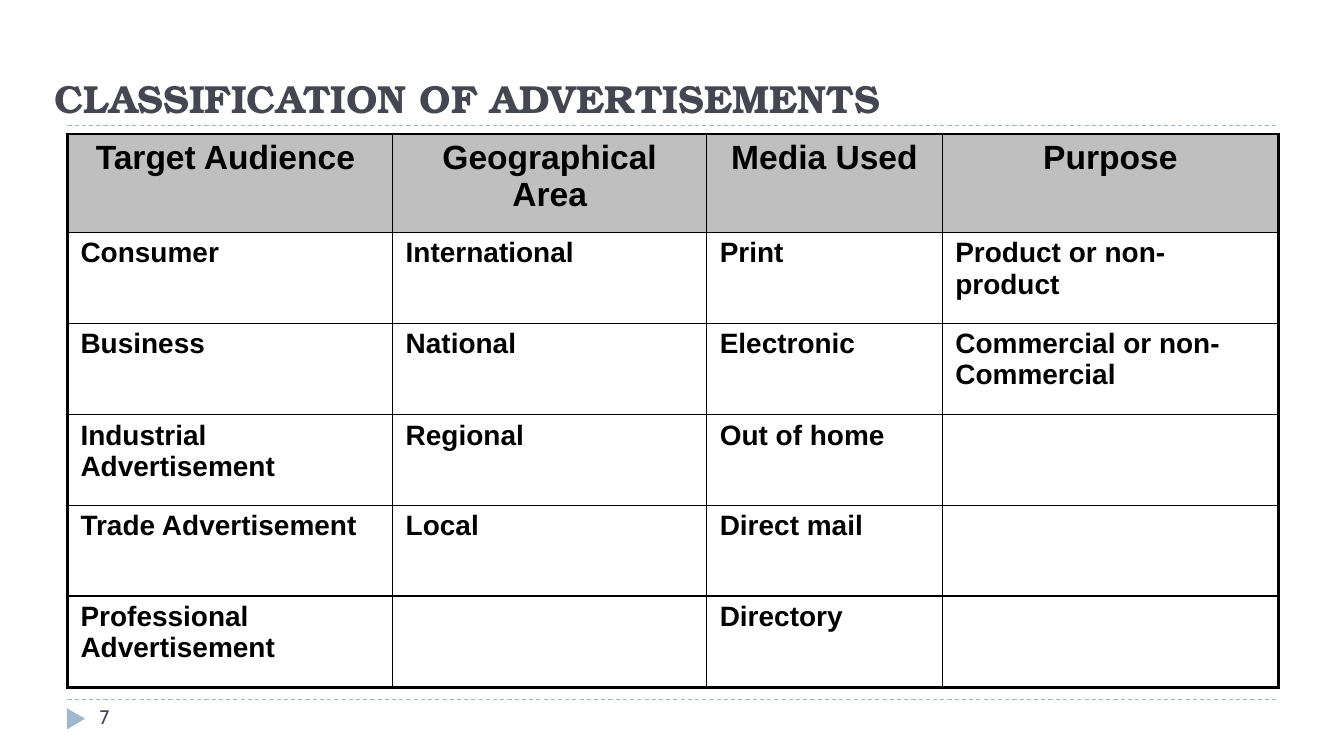
from lxml.etree import SubElement
from pptx import Presentation
from pptx.dml.color import RGBColor
from pptx.enum.dml import MSO_LINE_DASH_STYLE as Dash
from pptx.enum.shapes import MSO_CONNECTOR as Connector, MSO_SHAPE as Preset
from pptx.enum.text import MSO_ANCHOR as Anchor, PP_ALIGN as Align
from pptx.oxml import parse_xml
from pptx.oxml.ns import nsdecls, qn
from pptx.util import Inches, Pt

COLORS = {"ink": "464653", "accent": "9FB8CD", "header": "BFBFBF", "black": "000000"}

FORMATS = {
    "title": {"name": "TeX Gyre Bonum", "size": Pt(28), "bold": True},
    "number": {"name": "Cabin", "size": Pt(14)},
    "header": {"name": "Arial", "size": Pt(24), "bold": True},
    "body": {"name": "Arial", "size": Pt(20), "bold": True},
}

COLUMN_WIDTHS = [3.23, 3.12, 2.34, 3.34]
ROW_HEIGHTS = [0.98, 0.9, 0.91, 0.9, 0.9, 0.91]
CLASSES = [
    ["Target Audience ", "Geographical Area", "Media Used", "Purpose"],
    ["Consumer", "International", "Print", "Product or non-product"],
    ["Business", "National", "Electronic", "Commercial or non-Commercial"],
    ["Industrial Advertisement", "Regional", "Out of home", ""],
    ["Trade Advertisement", "Local", "Direct mail", ""],
    ["Professional Advertisement", "", "Directory", ""],
]


def color(name):
    return RGBColor.from_string(COLORS[name])


def write(para, text, style, ink):
    span = para.add_run()
    span.text = text
    for key, value in FORMATS[style].items():
        setattr(span.font, key, value)
    span.font.color.rgb = color(ink)


def add_text(page, box, text, style, anchor):
    frame = page.shapes.add_textbox(*map(Inches, box)).text_frame
    frame.word_wrap = True
    frame.vertical_anchor = anchor
    write(frame.paragraphs[0], text, style, "ink")


def add_rule(page, left, top, width):
    rule = page.shapes.add_connector(
        Connector.STRAIGHT, Inches(left), Inches(top), Inches(left + width), Inches(top))
    rule.line.color.rgb = color("accent")
    rule.line.width = Pt(0.75)
    rule.line.dash_style = Dash.DASH
    SubElement(rule._element.spPr, qn("a:effectLst"))


def set_borders(cell, widths):
    properties = cell._tc.get_or_add_tcPr()
    for index, (side, width) in enumerate(widths.items()):
        properties.insert(index, parse_xml(
            f'<a:ln{side} {nsdecls("a")} w="{Pt(width)}"><a:solidFill>'
            f'<a:srgbClr val="{COLORS["black"]}"/></a:solidFill></a:ln{side}>'))


# Title with the dashed rule below it
def add_title(page, box):
    left, top, width, height = box
    add_text(page, box, "CLASSIFICATION OF ADVERTISEMENTS", "title", Anchor.BOTTOM)
    add_rule(page, left + 0.23, top + height, 12.01)


# Table with a thick outer frame and thin inner lines
def add_classes(page, box):
    last_row, last_column = len(ROW_HEIGHTS) - 1, len(COLUMN_WIDTHS) - 1
    table = page.shapes.add_table(
        last_row + 1, last_column + 1, *map(Inches, box)).table
    table.first_row = table.horz_banding = False
    for column, width in zip(table.columns, COLUMN_WIDTHS):
        column.width = Inches(width)
    for row, height in zip(table.rows, ROW_HEIGHTS):
        row.height = Inches(height)

    for r, texts in enumerate(CLASSES):
        for c, text in enumerate(texts):
            cell = table.cell(r, c)
            cell.margin_left = cell.margin_right = Inches(0.13)
            para = cell.text_frame.paragraphs[0]
            if r == 0:
                cell.fill.solid()
                cell.fill.fore_color.rgb = color("header")
                para.alignment = Align.CENTER
            else:
                cell.fill.background()
            if text:
                write(para, text, "body" if r else "header", "black")
            outer = {"L": c == 0, "R": c == last_column, "T": r == 0, "B": r == last_row}
            set_borders(cell, {side: 2.25 if edge else 1 for side, edge in outer.items()})


# Footer: dashed rule, marker and page number
def add_footer(page, box):
    left, top, width, height = box
    add_rule(page, left, top, width)
    marker = page.shapes.add_shape(
        Preset.ISOSCELES_TRIANGLE, Inches(left - 0.02), Inches(top + 0.1),
        Inches(0.21), Inches(0.18))
    marker.rotation = 90
    marker.shadow.inherit = False
    marker.fill.solid()
    marker.fill.fore_color.rgb = color("accent")
    marker.line.fill.background()
    add_text(page, (left + 0.22, top, 2.89, height), "7", "number", Anchor.TOP)


def main():
    deck = Presentation()
    deck.slide_width, deck.slide_height = Inches(13.35), Inches(7.5)
    page = deck.slides.add_slide(deck.slide_layouts[6])
    add_footer(page, (0.67, 6.95, 12.01, 0.4))
    add_title(page, (0.44, 0.17, 12.58, 1.08))
    add_classes(page, (0.67, 1.33, 12.03, 5.5))
    deck.save("out.pptx")


if __name__ == "__main__":
    main()
